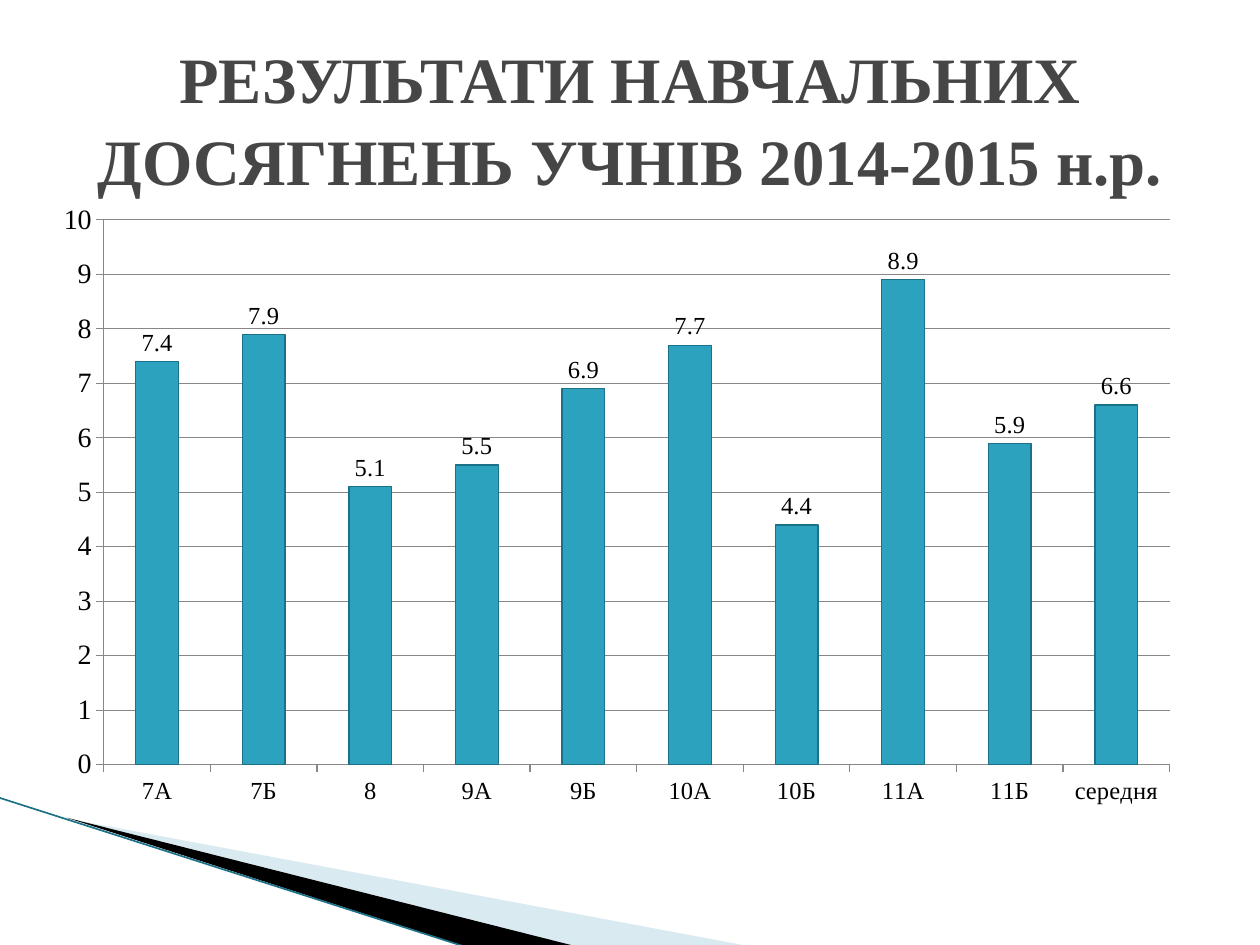
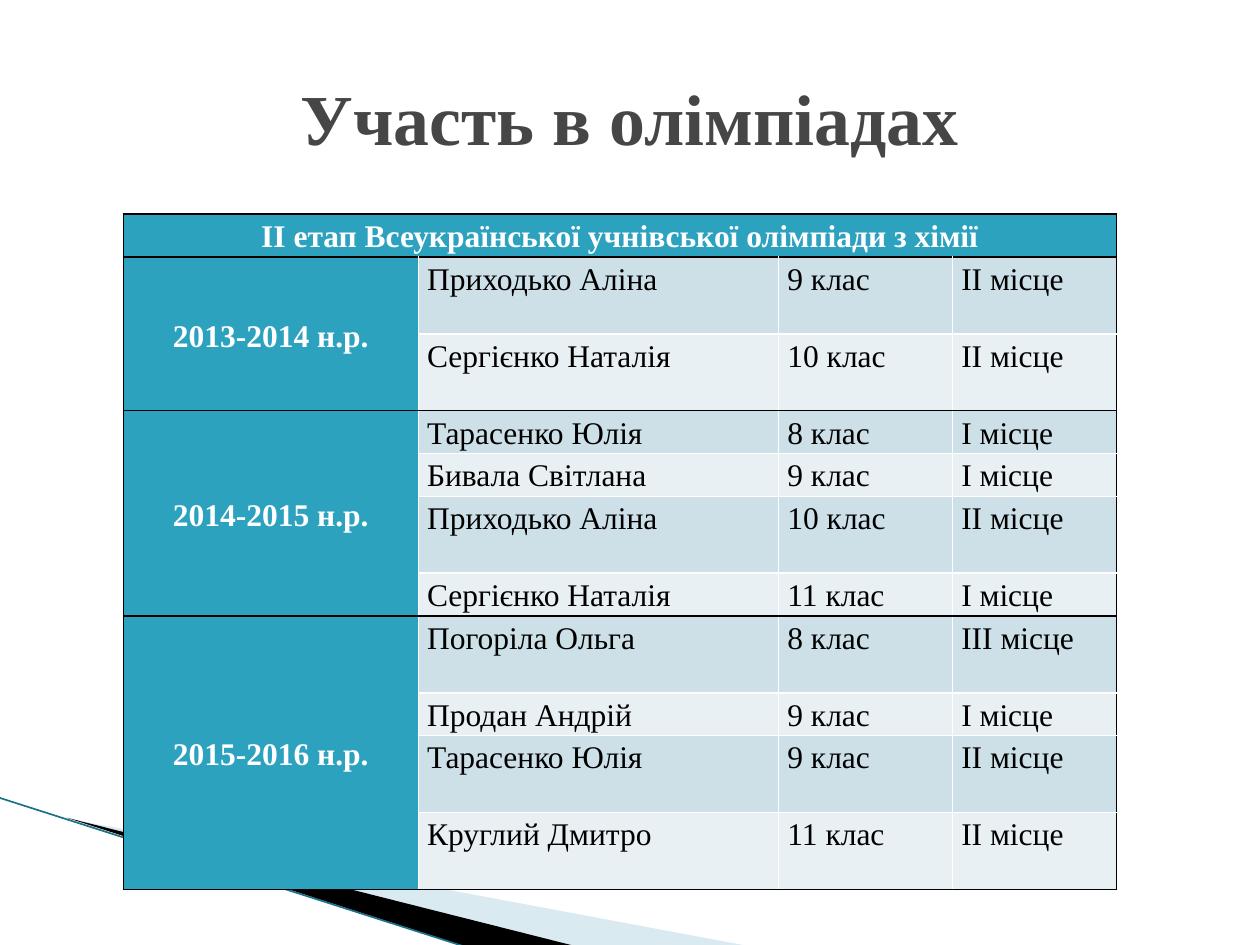
import pptx
import pptx.chart.data
import pptx.dml.color
import pptx.enum.chart
import pptx.enum.shapes
import pptx.enum.text
import pptx.oxml
import pptx.oxml.ns
import pptx.util
from lxml import etree

Inches = pptx.util.Inches
Pt = pptx.util.Pt
qn = pptx.oxml.ns.qn
Align = pptx.enum.text.PP_ALIGN
Anchor = pptx.enum.text.MSO_ANCHOR

FONT = "Times New Roman"
TEAL, DARK_TEAL, PALE_TEAL = "2DA2BF", "1B7288", "A0CBDC"
BAND_DARK, BAND_LIGHT = "CDE0E8", "E8F0F4"
TITLE_GREY, GRID_GREY = "464646", "878787"
BLACK, WHITE = "000000", "FFFFFF"


def color(hex_code):
    return pptx.dml.color.RGBColor.from_string(hex_code)


def style_font(font, size, hex_code=BLACK, bold=False):
    font.name = FONT
    font.size = Pt(size)
    font.bold = bold
    font.color.rgb = color(hex_code)


def write(frame, text, size=18, hex_code=BLACK, bold=False, align=Align.LEFT, spacing=1.0):
    frame.word_wrap = True
    paragraph = frame.paragraphs[0]
    paragraph.alignment = align
    paragraph.line_spacing = spacing
    run = paragraph.add_run()
    run.text = text
    style_font(run.font, size, hex_code, bold)


def paint(fill, hex_code):
    fill.solid()
    fill.fore_color.rgb = color(hex_code)


def draw_line(line, hex_code, width):
    line.color.rgb = color(hex_code)
    line.width = Pt(width)


def set_borders(cell, left, right, top, bottom):
    properties = cell._tc.get_or_add_tcPr()
    for side, hex_code in zip("LRTB", (left, right, top, bottom)):
        border = etree.SubElement(properties, qn(f"a:ln{side}"), w=str(Pt(1)))
        solid = etree.SubElement(border, qn("a:solidFill"))
        etree.SubElement(solid, qn("a:srgbClr"), val=hex_code)


class Deck:
    def __init__(self):
        self.presentation = pptx.Presentation()
        self.presentation.slide_width = Inches(10)
        self.presentation.slide_height = Inches(7.5)
        self.slide = None

    def new_slide(self):
        self.slide = self.presentation.slides.add_slide(self.presentation.slide_layouts[6])
        # Corner wedges and edge line
        self.wedge([(0.55, 6.5), (5.95, 7.51), (4.56, 7.51)], PALE_TEAL, opacity=40)
        self.wedge([(0.53, 6.49), (4.57, 7.51), (3.72, 7.52)], BLACK)
        self.edge((-0.01, 6.33), (3.71, 7.52))

    def wedge(self, corners, hex_code, opacity=100):
        points = [(Inches(x), Inches(y)) for x, y in corners]
        builder = self.slide.shapes.build_freeform(*points[0], scale=1.0)
        builder.add_line_segments(points[1:], close=True)
        shape = builder.convert_to_shape()
        shape.shadow.inherit = False
        shape.line.fill.background()
        paint(shape.fill, hex_code)
        if opacity < 100:
            tint = shape._element.spPr.find(".//" + qn("a:srgbClr"))
            etree.SubElement(tint, qn("a:alpha"), val=str(opacity * 1000))

    def edge(self, start, end):
        line = self.slide.shapes.add_connector(
            pptx.enum.shapes.MSO_CONNECTOR.STRAIGHT, *map(Inches, start + end))
        draw_line(line.line, DARK_TEAL, 0.95)
        etree.SubElement(line._element.spPr, qn("a:effectLst"))

    def title(self, text, size, spacing=1.0):
        box = self.slide.shapes.add_textbox(Inches(0.5), Inches(0.3), Inches(9), Inches(1.25))
        box.text_frame.vertical_anchor = Anchor.MIDDLE
        write(box.text_frame, text, size=size, hex_code=TITLE_GREY, bold=True,
              align=Align.CENTER, spacing=spacing)

    def column_chart(self, scores):
        data = pptx.chart.data.CategoryChartData()
        data.categories = list(scores)
        data.add_series("Series 1", scores.values())
        chart = self.slide.shapes.add_chart(
            pptx.enum.chart.XL_CHART_TYPE.COLUMN_CLUSTERED,
            Inches(0.5), Inches(1.62), Inches(9), Inches(4.95), data).chart
        chart.has_legend = False
        chart.has_title = False
        style_font(chart.font, 14)

        # Axes
        for axis, size in ((chart.category_axis, 14), (chart.value_axis, 16)):
            axis.major_tick_mark = pptx.enum.chart.XL_TICK_MARK.OUTSIDE
            style_font(axis.tick_labels.font, size)
            draw_line(axis.format.line, GRID_GREY, 0.75)
        chart.value_axis.minimum_scale = 0
        chart.value_axis.maximum_scale = 10
        chart.value_axis.major_unit = 1
        draw_line(chart.value_axis.major_gridlines.format.line, GRID_GREY, 0.75)

        # Columns and their values
        plot = chart.plots[0]
        plot.gap_width = 150
        plot.vary_by_categories = False
        columns = plot.series[0]
        paint(columns.format.fill, TEAL)
        draw_line(columns.format.line, DARK_TEAL, 0.75)
        labels = columns.data_labels
        labels.show_value = True
        labels.position = pptx.enum.chart.XL_LABEL_POSITION.OUTSIDE_END
        style_font(labels.font, 14)

        # Inner plot area
        area = chart._chartSpace.chart.plotArea
        for old in area.findall(qn("c:layout")):
            area.remove(old)
        layout = etree.Element(qn("c:layout"))
        area.insert(0, layout)
        manual = etree.SubElement(layout, qn("c:manualLayout"))
        settings = dict(layoutTarget="inner", xMode="edge", yMode="edge",
                        x=0.036, y=0.025, w=0.94, h=0.874)
        for tag, value in settings.items():
            etree.SubElement(manual, qn(f"c:{tag}"), val=str(value))

    def cell(self, cell, text, fill, borders, **text_format):
        set_borders(cell, *borders)
        paint(cell.fill, fill)
        cell.margin_left = cell.margin_right = Inches(0.07)
        cell.margin_top = cell.margin_bottom = 0
        if text:
            write(cell.text_frame, text, spacing=1.15, **text_format)

    def results_table(self, heading, years, widths, heights):
        table = self.slide.shapes.add_table(
            len(heights), len(widths), Inches(0.98), Inches(1.7),
            Inches(sum(widths)), Inches(sum(heights))).table
        for column, width in zip(table.columns, widths):
            column.width = Inches(width)
        for row, height in zip(table.rows, heights):
            row.height = Inches(height)
        emphasis = dict(hex_code=WHITE, bold=True, align=Align.CENTER)

        # Heading row
        last = len(widths) - 1
        for col in range(len(widths)):
            self.cell(table.cell(0, col), "" if col else heading, TEAL, [BLACK] * 4, **emphasis)
        table.cell(0, 0).merge(table.cell(0, last))

        # One block of rows for each school year
        top = 1
        for year, winners in years.items():
            bottom = top + len(winners) - 1
            for row, winner in enumerate(winners, top):
                year_text = year if row == top else ""
                self.cell(table.cell(row, 0), year_text, TEAL,
                          (BLACK, WHITE, BLACK, BLACK), **emphasis)
                band = BAND_LIGHT if (row - top) % 2 else BAND_DARK
                for col, text in enumerate(winner, 1):
                    borders = (WHITE, BLACK if col == last else WHITE,
                               BLACK if row == top else WHITE,
                               BLACK if row == bottom else WHITE)
                    self.cell(table.cell(row, col), text, band, borders)
            table.cell(top, 0).merge(table.cell(bottom, 0))
            table.cell(top, 0).vertical_anchor = Anchor.MIDDLE
            top = bottom + 1


def main():
    deck = Deck()

    # Slide 1: average marks by class
    deck.new_slide()
    deck.title("РЕЗУЛЬТАТИ НАВЧАЛЬНИХ ДОСЯГНЕНЬ УЧНІВ 2014-2015 н.р.", size=37, spacing=1.05)
    deck.column_chart({
        "7А": 7.4, "7Б": 7.9, "8": 5.1, "9А": 5.5, "9Б": 6.9,
        "10А": 7.7, "10Б": 4.4, "11А": 8.9, "11Б": 5.9, "середня": 6.6,
    })

    # Slide 2: olympiad results by school year
    deck.new_slide()
    short, tall = 0.34, 0.61
    deck.results_table(
        "ІІ етап Всеукраїнської учнівської олімпіади з хімії",
        {
            "2013-2014 н.р.": [
                ("Приходько Аліна", "9 клас", "ІІ місце"),
                ("Сергієнко Наталія", "10 клас", "ІІ місце"),
            ],
            "2014-2015 н.р.": [
                ("Тарасенко Юлія", "8 клас", "І місце"),
                ("Бивала Світлана", "9 клас", "І місце"),
                ("Приходько Аліна", "10 клас", "ІІ місце"),
                ("Сергієнко Наталія", "11 клас", "І місце"),
            ],
            "2015-2016 н.р.": [
                ("Погоріла Ольга", "8 клас", "ІІІ місце"),
                ("Продан Андрій", "9 клас", "І місце"),
                ("Тарасенко Юлія", "9 клас", "ІІ місце"),
                ("Круглий Дмитро", "11 клас", "ІІ місце"),
            ],
        },
        widths=[2.34, 2.86, 1.38, 1.3],
        heights=[short, tall, tall, short, short, tall, short, tall, short, tall, tall],
    )
    deck.title("Участь в олімпіадах", size=41)

    deck.presentation.save("out.pptx")


if __name__ == "__main__":
    main()
